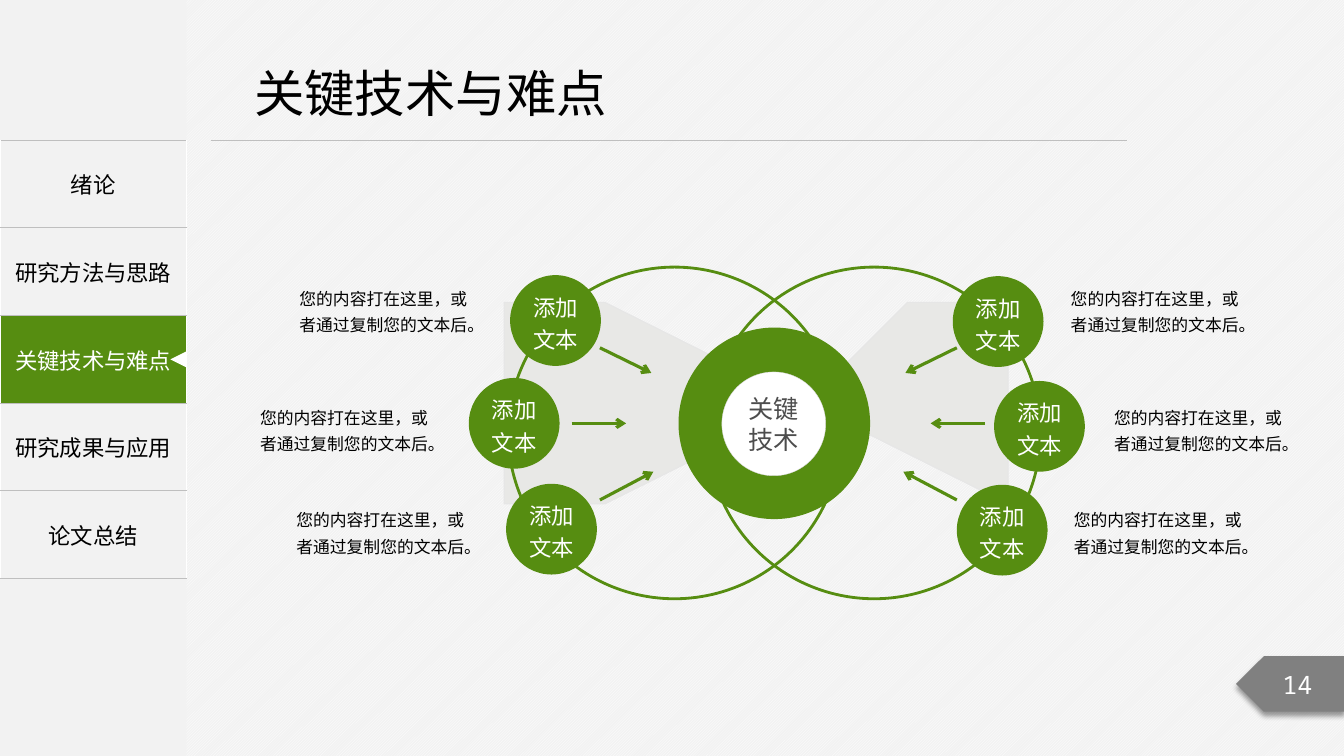
from lxml import etree
from pptx import Presentation
from pptx.dml.color import RGBColor
from pptx.enum.dml import MSO_PATTERN
from pptx.enum.shapes import MSO_CONNECTOR, MSO_SHAPE
from pptx.enum.text import MSO_ANCHOR, PP_ALIGN
from pptx.oxml import parse_xml
from pptx.oxml.ns import nsdecls, qn
from pptx.util import Inches, Pt

GREEN = RGBColor(0x56, 0x8D, 0x11)
WHITE = RGBColor(0xFF, 0xFF, 0xFF)
BLACK = RGBColor(0, 0, 0)
PALE = RGBColor(0xF2, 0xF2, 0xF2)
RULE = RGBColor(0xBF, 0xBF, 0xBF)
GRAY = RGBColor(0x80, 0x80, 0x80)
DARK = RGBColor(0x4D, 0x4D, 0x4D)
WEDGE = RGBColor(0xE8, 0xE8, 0xE6)
WEDGE_EDGE = RGBColor(0xE6, 0xE6, 0xE6)
RING_EDGE = RGBColor(0xD7, 0xD7, 0xD7)
OVAL = MSO_SHAPE.OVAL
CENTER, LEFT = PP_ALIGN.CENTER, PP_ALIGN.LEFT
MIDDLE, TOP = MSO_ANCHOR.MIDDLE, MSO_ANCHOR.TOP
CJK = "Noto Sans CJK SC"

TITLE = "关键技术与难点"
CHAPTERS = ["绪论", "研究方法与思路", TITLE, "研究成果与应用", "论文总结"]
CAPTION = "您的内容打在这里，或者通过复制您的文本后。"
# Left and top of each node circle, then of its caption
NODES = [
    ((5.06, 2.73), (2.89, 2.76)), ((4.65, 3.75), (2.5, 3.94)),
    ((5.02, 4.8), (2.86, 4.96)), ((9.45, 2.74), (10.54, 2.76)),
    ((9.86, 3.78), (10.97, 3.94)), ((9.49, 4.81), (10.57, 4.96)),
]
LEFT_ARROWS = [((5.95, 3.45), (6.46, 3.7)), ((5.67, 4.2), (6.21, 4.2)),
               ((5.95, 4.96), (6.48, 4.68))]
# Bézier curves of the left wedge's outer edge; its tip is the first point
WEDGE_TIP = (7.72, 4.13)
WEDGE_CURVES = [
    ((5.54, 5.48), (5.01, 4.83), (5.07, 4.61), (5.04, 4.27)),
    ((5.04, 4.27), (5.06, 4), (5.12, 3.71), (5.27, 3.47)),
    ((5.27, 3.47), (5.53, 3.11), (5.47, 3.14), (5.88, 2.87)),
]


def write(frame, text, size, color, font=CJK, align=CENTER, spacing=None):
    frame.text = text
    paragraph = frame.paragraphs[0]
    paragraph.alignment = align
    if spacing:
        paragraph.line_spacing = spacing
    paragraph.font.size = Pt(size)
    paragraph.font.color.rgb = color
    paragraph.font.name = font
    properties = paragraph._p.pPr.find(qn("a:defRPr"))
    etree.SubElement(properties, qn("a:ea")).set("typeface", CJK)


def set_margins(frame, horizontal, vertical):
    frame.margin_left = frame.margin_right = Inches(horizontal)
    frame.margin_top = frame.margin_bottom = Inches(vertical)


def paint(shape, fill=None, line=None, width=1):
    shape.shadow.inherit = False
    if fill is None:
        shape.fill.background()
    else:
        shape.fill.solid()
        shape.fill.fore_color.rgb = fill
    if line is None:
        shape.line.fill.background()
    else:
        shape.line.color.rgb = line
        shape.line.width = Pt(width)


def add_shape(slide, kind, box, fill=None, line=None, width=1):
    shape = slide.shapes.add_shape(kind, *map(Inches, box))
    paint(shape, fill, line, width)
    shape.text_frame.vertical_anchor = MIDDLE
    return shape


def add_line(slide, start, end, color, width, arrow=False):
    line = slide.shapes.add_connector(
        MSO_CONNECTOR.STRAIGHT, *map(Inches, (*start, *end)))
    line.line.color.rgb = color
    line.line.width = Pt(width)
    if arrow:
        etree.SubElement(line.line._get_or_add_ln(),
                         qn("a:tailEnd")).set("type", "arrow")
    etree.SubElement(line._element.spPr, qn("a:effectLst"))


def add_cell_borders(cell):
    properties = cell._tc.get_or_add_tcPr()
    for position, side in enumerate(("lnT", "lnB")):
        properties.insert(position, parse_xml(
            f'<a:{side} {nsdecls("a")} w="12700"><a:solidFill>'
            f'<a:srgbClr val="{RULE}"/></a:solidFill></a:{side}>'))


def add_sidebar(slide, width, table_top, row_height):
    add_shape(slide, MSO_SHAPE.RECTANGLE, (0, 0, width, 7.5), PALE)
    box = (0, table_top, width, row_height * len(CHAPTERS))
    table = slide.shapes.add_table(len(CHAPTERS), 1, *map(Inches, box)).table
    table.first_row = table.horz_banding = False
    for row, chapter in enumerate(CHAPTERS):
        current = chapter == TITLE
        cell = table.cell(row, 0)
        cell.fill.solid()
        cell.fill.fore_color.rgb = GREEN if current else PALE
        cell.vertical_anchor = MIDDLE
        cell.margin_left = cell.margin_right = Inches(0.05)
        write(cell.text_frame, chapter, 16, WHITE if current else BLACK)
        add_cell_borders(cell)
        if current:
            middle = table_top + (row + 0.5) * row_height
            pointer = add_shape(slide, MSO_SHAPE.ISOSCELES_TRIANGLE,
                                (width - 0.16, middle - 0.08, 0.16, 0.16), WHITE)
            pointer.rotation = 270


def add_title(slide, left, top, width, height):
    title = slide.shapes.title
    title.left, title.top = Inches(left), Inches(top)
    title.width, title.height = Inches(width), Inches(height)
    title.text_frame.word_wrap = False
    title.text_frame.vertical_anchor = TOP
    write(title.text_frame, TITLE, 36, BLACK, align=LEFT)
    add_line(slide, (2.09, 1.39), (11.18, 1.39), RULE, 0.5)


def add_page_tag(slide, box):
    tag = add_shape(slide, MSO_SHAPE.PENTAGON, box, GRAY)
    tag._element.spPr.xfrm.set("flipH", "1")
    shadow = parse_xml(
        f'<a:outerShdw {nsdecls("a")} blurRad="50800" dist="38100" dir="5400000">'
        '<a:srgbClr val="000000"><a:alpha val="40000"/></a:srgbClr></a:outerShdw>')
    tag._element.spPr.find(qn("a:effectLst")).append(shadow)
    write(tag.text_frame, "14", 18, WHITE, "Noto Sans Mono")


def mirror(point, axis):
    return 2 * axis - point[0], point[1]


def curve_points(curve, steps=12):
    for step in range(steps + 1):
        t = step / steps
        weights = ((1 - t) ** 3, 3 * t * (1 - t) ** 2, 3 * t * t * (1 - t), t ** 3)
        yield tuple(sum(weight * point[axis] for weight, point in zip(weights, curve))
                    for axis in (0, 1))


def add_wedge(slide, mirrored):
    points = [WEDGE_TIP] + [p for curve in WEDGE_CURVES for p in curve_points(curve)]
    if mirrored:
        points = [mirror(point, 7.67) for point in points]
    builder = slide.shapes.build_freeform(*points[0], scale=Inches(1))
    builder.add_line_segments(points[1:], close=True)
    paint(builder.convert_to_shape(), WEDGE, WEDGE_EDGE, 0.75)


def add_node(slide, circle_corner, caption_corner):
    circle = add_shape(slide, OVAL, (*circle_corner, 0.9, 0.9), GREEN)
    set_margins(circle.text_frame, 0.08, 0.04)
    write(circle.text_frame, "添加文本", 16, WHITE, "Arial", spacing=1.2)
    caption = slide.shapes.add_textbox(*map(Inches, (*caption_corner, 1.94, 0.61)))
    caption.text_frame.word_wrap = True
    set_margins(caption.text_frame, 0.08, 0.04)
    write(caption.text_frame, CAPTION, 12, BLACK, align=LEFT, spacing=1.3)


def add_diagram(slide):
    for mirrored in (True, False):
        add_wedge(slide, mirrored)
    for left in (5.04, 7.02):
        add_shape(slide, OVAL, (left, 2.65, 3.3, 3.29), line=GREEN, width=2)
    for start, end in LEFT_ARROWS:
        add_line(slide, start, end, GREEN, 2.25, arrow=True)
        add_line(slide, mirror(start, 7.72), mirror(end, 7.72), GREEN, 2.25, arrow=True)
    add_shape(slide, OVAL, (6.73, 3.25, 1.9, 1.9), GREEN)
    core = add_shape(slide, OVAL, (7.16, 3.69, 1.03, 1.03), WHITE, RING_EDGE, 0.25)
    write(core.text_frame, "关键技术", 18, DARK, "Arial Narrow")
    for circle_corner, caption_corner in NODES:
        add_node(slide, circle_corner, caption_corner)


def main():
    presentation = Presentation()
    presentation.slide_width, presentation.slide_height = Inches(13.33), Inches(7.5)
    slide = presentation.slides.add_slide(presentation.slide_layouts[5])
    background = slide.background.fill
    background.patterned()
    background.pattern = MSO_PATTERN.LIGHT_UPWARD_DIAGONAL
    background.fore_color.rgb = WHITE
    background.back_color.rgb = PALE
    add_sidebar(slide, 1.85, 1.39, 0.87)
    add_title(slide, 2.42, 0.57, 3.74, 0.71)
    add_page_tag(slide, (12.26, 6.51, 1.08, 0.55))
    add_diagram(slide)
    presentation.save("out.pptx")


if __name__ == "__main__":
    main()
